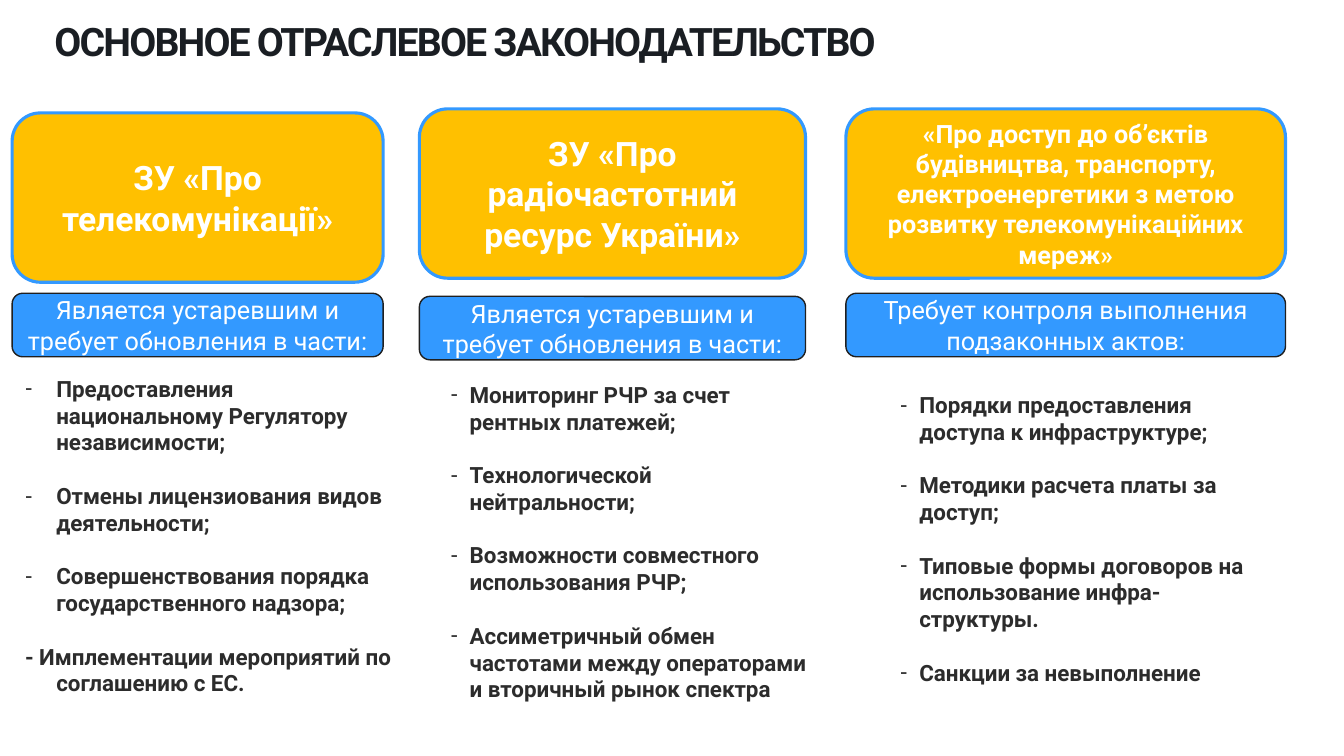
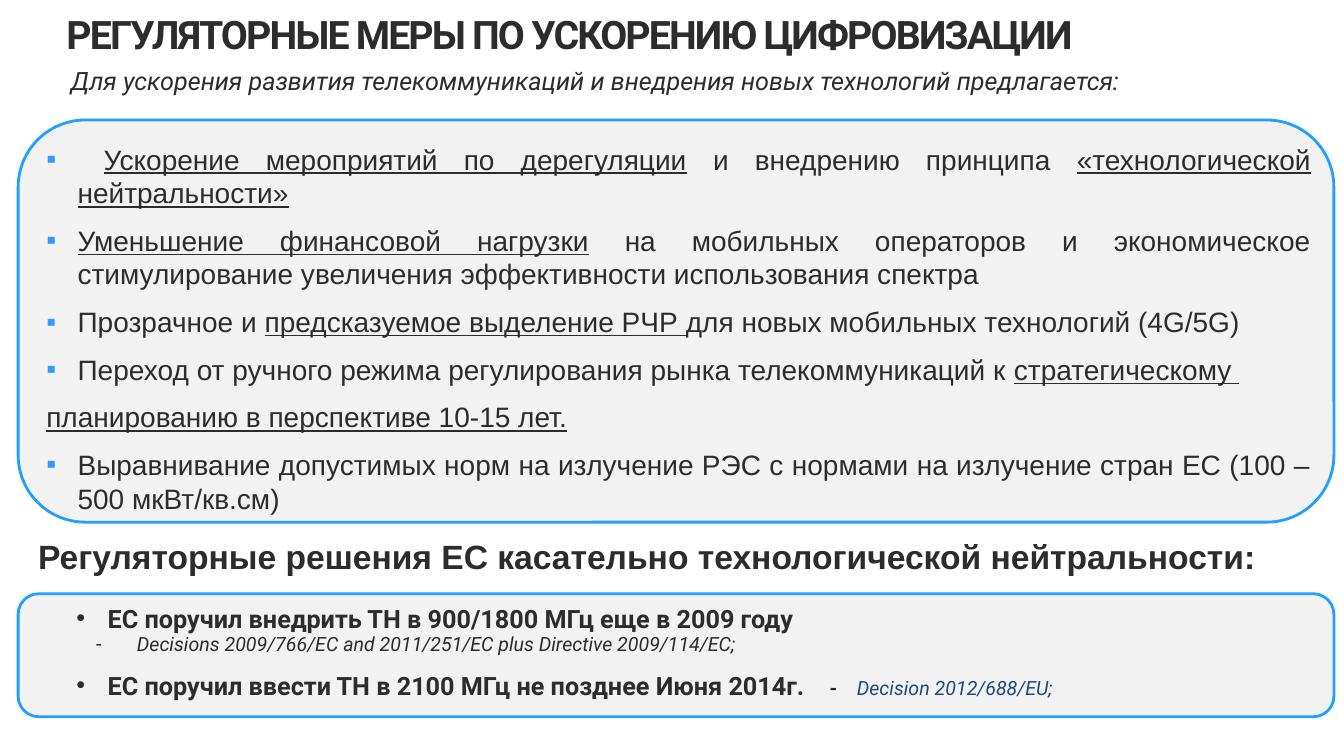
"""Build two slides on telecom legislation and regulatory measures for digitalisation."""
from lxml.etree import SubElement
from pptx import Presentation
from pptx.dml.color import RGBColor
from pptx.enum.shapes import MSO_SHAPE
from pptx.enum.text import MSO_ANCHOR, PP_ALIGN
from pptx.oxml.ns import qn
from pptx.util import Inches, Pt

INK = RGBColor(0x2C, 0x2C, 0x2C)
TITLE_INK = RGBColor(0x1A, 0x1E, 0x23)
WHITE = RGBColor(0xFF, 0xFF, 0xFF)
AMBER = RGBColor(0xFF, 0xC0, 0x00)
BLUE = RGBColor(0x33, 0x99, 0xFF)
BRIGHT_BLUE = RGBColor(0x22, 0x9F, 0xFF)
NAVY = RGBColor(0x1F, 0x49, 0x7D)
BLACK = RGBColor(0x20, 0x20, 0x20)
PALE = RGBColor(0xF2, 0xF2, 0xF2)
BODY, PLAIN = "Roboto", "Arial"


def add_area(slide, bounds, fill=None, line=None, weight=1, margin=None):
    """Add a rounded panel, or a plain text box without a fill, and return its text frame."""
    place = [Inches(length) for length in bounds]
    if fill is None:
        frame = slide.shapes.add_textbox(*place).text_frame
    else:
        panel = slide.shapes.add_shape(MSO_SHAPE.ROUNDED_RECTANGLE, *place)
        panel.shadow.inherit = False
        panel.fill.solid()
        panel.fill.fore_color.rgb = fill
        panel.line.color.rgb = line
        panel.line.width = Pt(weight)
        frame = panel.text_frame
        frame.vertical_anchor = MSO_ANCHOR.MIDDLE
    frame.word_wrap = True
    if margin is not None:
        frame.margin_left = frame.margin_right = Inches(margin)
        frame.margin_top = frame.margin_bottom = Inches(margin)
    return frame


def write(frame, runs, size, color=INK, font=BODY, bold=False, italic=False, align=PP_ALIGN.LEFT,
          marker=None, marker_color=None, left=0, hang=0, gap=0, pitch=None, tabs=(), tracking=None):
    """Append a paragraph made of (text, overrides) runs."""
    paragraph = frame.add_paragraph() if frame.text else frame.paragraphs[0]
    properties = paragraph._p.get_or_add_pPr()
    properties.set("marL", str(Inches(left)))
    properties.set("indent", str(-Inches(hang)))
    if marker:
        if marker_color:
            tint = SubElement(properties, qn("a:buClr"))
            SubElement(tint, qn("a:srgbClr"), val=str(marker_color))
        SubElement(properties, qn("a:buFont"), typeface=PLAIN)
        SubElement(properties, qn("a:buChar"), char=marker)
    if tabs:
        stops = SubElement(properties, qn("a:tabLst"))
        for stop in tabs:
            SubElement(stops, qn("a:tab"), pos=str(Inches(stop)), algn="l")
    paragraph.alignment = align
    paragraph.space_before = Pt(gap)
    if pitch:
        paragraph.line_spacing = Pt(pitch)
    for text, changes in runs:
        run = paragraph.add_run()
        run.text = text
        run.font.name = font
        run.font.size = Pt(changes.get("size", size))
        run.font.bold = changes.get("bold", bold)
        run.font.italic = changes.get("italic", italic)
        run.font.underline = changes.get("underline", False)
        run.font.color.rgb = changes.get("color", color)
        if tracking:
            run._r.get_or_add_rPr().set("spc", str(tracking))


deck = Presentation()
deck.slide_width, deck.slide_height = Inches(13.33), Inches(7.5)
titles = [
    ("ОСНОВНОЕ ОТРАСЛЕВОЕ ЗАКОНОДАТЕЛЬСТВО", (0.54, 0.17, 8.97, 0.55), TITLE_INK),
    ("РЕГУЛЯТОРНЫЕ МЕРЫ ПО УСКОРЕНИЮ ЦИФРОВИЗАЦИИ", (0.66, 0.1, 11, 0.48), INK),
]
for title, bounds, color in titles:
    slide = deck.slides.add_slide(deck.slide_layouts[6])
    write(add_area(slide, bounds, margin=0), [(title, {})], 28, color, bold=True, tracking=-130)
laws_slide, measures_slide = deck.slides

OUTDATED = "Является устаревшим и требует обновления в части:"
laws = [
    dict(left=0.12, width=3.68, law_top=1.12, status_top=2.91, size=24,
         law=["ЗУ «Про телекомунікації»"], status=OUTDATED,
         points_at=(0.15, 3.67, 3.92, 3.33), hang=0.31,
         points=[("-", "Предоставления национальному Регулятору независимости;"),
                 ("-", "Отмены лицензиования видов деятельности;"),
                 ("-", "Совершенствования порядка государственного надзора;"),
                 (None, "- Имплементации мероприятий по соглашению с ЕС.")]),
    dict(left=4.16, width=3.83, law_top=1.08, status_top=2.94, size=24,
         law=["ЗУ «Про радіочастотний", "ресурс України»"], status=OUTDATED,
         points_at=(4.37, 3.73, 3.83, 3.33), hang=0.19,
         points=[("-", "Мониторинг РЧР за счет рентных платежей;"),
                 ("-", "Технологической нейтральности;"),
                 ("-", "Возможности совместного использования РЧР;"),
                 ("-", "Ассиметричный обмен частотами между операторами и вторичный рынок спектра")]),
    dict(left=8.39, width=4.36, law_top=1.08, status_top=2.91, size=18,
         law=["«Про доступ до об’єктів будівництва, транспорту, електроенергетики "
              "з метою розвитку телекомунікаційних мереж»"],
         status="Требует контроля выполнения подзаконных актов:",
         points_at=(8.83, 3.83, 3.81, 3.06), hang=0.19,
         points=[("-", "Порядки предоставления доступа к инфраструктуре;"),
                 ("-", "Методики расчета платы за доступ;"),
                 ("-", "Типовые формы договоров на использование инфра-структуры."),
                 ("-", "Санкции за невыполнение")]),
]
for law in laws:
    left, width, hang = law["left"], law["width"], law["hang"]
    law_frame = add_area(laws_slide, (left, law["law_top"], width, 1.68), AMBER, BLUE, 2.25)
    for text in law["law"]:
        write(law_frame, [(text, {})], law["size"], WHITE, bold=True, align=PP_ALIGN.CENTER)
    status_frame = add_area(laws_slide, (left, law["status_top"], width, 0.63), BLUE, BLACK)
    write(status_frame, [(law["status"], {})], 18, WHITE, align=PP_ALIGN.CENTER)
    points_frame = add_area(laws_slide, law["points_at"])
    for number, (marker, text) in enumerate(law["points"]):
        write(points_frame, [(text, {})], 16, bold=True, marker=marker,
              left=hang, hang=hang, gap=19 if number else 0)

for top, height in [(1.19, 3.99), (5.89, 1.22)]:
    add_area(measures_slide, (0.18, top, 13.05, height), PALE, BRIGHT_BLUE, 2)

subtitle = "Для ускорения развития телекоммуникаций и внедрения новых технологий предлагается:"
write(add_area(measures_slide, (0.18, 0.6, 11.45, 0.4)), [(subtitle, {})], 18,
      italic=True, align=PP_ALIGN.CENTER)

KEY = {"underline": True}
measures = [
    ("▪", [(" ", {}), ("Ускорение мероприятий по дерегуляции", KEY),
           (" и внедрению принципа ", {}), ("«технологической нейтральности»", KEY)]),
    ("▪", [("Уменьшение финансовой нагрузки", KEY),
           (" на мобильных операторов и экономическое cтимулирование "
            "увеличения эффективности использования спектра", {})]),
    ("▪", [("Прозрачное и ", {}), ("предсказуемое выделение РЧР ", KEY),
           ("для новых мобильных технологий (4G/5G)", {})]),
    ("▪", [("Переход от ручного режима регулирования рынка телекоммуникаций к ", {}),
           ("стратегическому ", KEY)]),
    (None, [("планированию в перспективе 10-15 лет.", KEY)]),
    ("▪", [("Выравнивание допустимых норм на излучение РЭС с нормами на излучение "
            "стран ЕС (100 – 500 мкВт/кв.см)", {})]),
]
measures_frame = add_area(measures_slide, (0.38, 1.33, 12.7, 3.82), margin=0.08)
for number, (marker, runs) in enumerate(measures):
    indent = 0.31 if marker else 0
    write(measures_frame, runs, 20, font=PLAIN, align=PP_ALIGN.JUSTIFY, marker=marker,
          marker_color=BLUE, left=indent, hang=indent, gap=10 if number else 0)

decisions_frame = add_area(measures_slide, (0.66, 6.01, 12.11, 1))
write(decisions_frame, [("ЕС поручил внедрить ТН в 900/1800 МГц еще в 2009 году", {})], 18,
      bold=True, marker="•", left=0.31, hang=0.31, pitch=16)
write(decisions_frame, [("Decisions 2009/766/EC and 2011/251/EC plus Directive 2009/114/EC;", {})], 14,
      italic=True, marker="-", left=0.6, hang=0.41, pitch=16)
write(decisions_frame,
      [("ЕС поручил ввести ТН в 2100 МГц не позднее Июня 2014г.", {}),
       ("\t-\t", {"size": 14}),
       ("Decision 2012/688/EU;", {"size": 14, "bold": False, "italic": True, "color": NAVY})],
      18, bold=True, marker="•", left=0.31, hang=0.31, gap=16, pitch=16, tabs=(7.47, 7.74))

heading = "Регуляторные решения ЕС касательно технологической нейтральности:"
write(add_area(measures_slide, (0.28, 5.27, 12.39, 0.91)), [(heading, {})], 24, font=PLAIN, bold=True)

deck.save("out.pptx")
